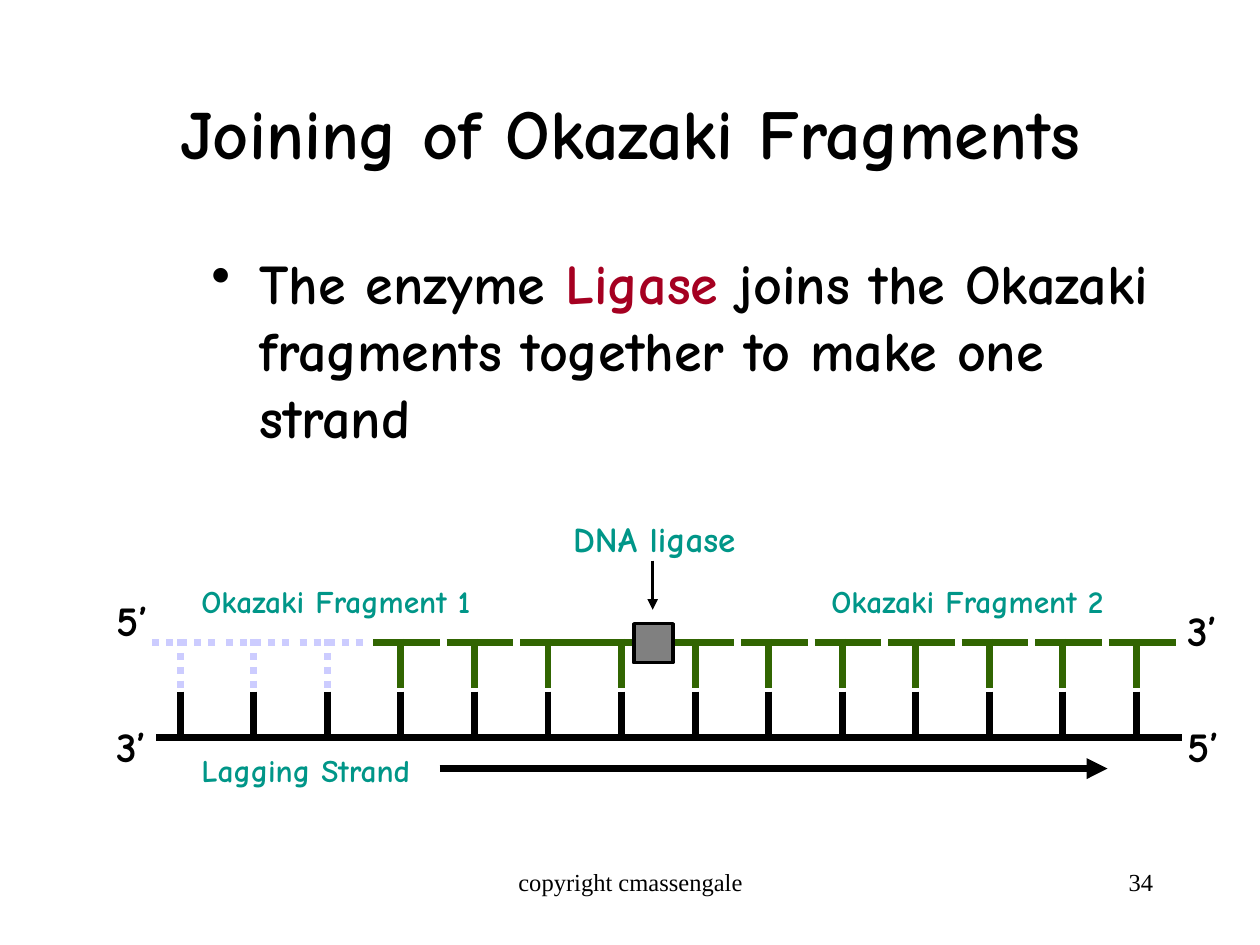
"""Build the slide on joining Okazaki fragments with DNA ligase."""
import pptx
import pptx.dml.color
import pptx.enum.dml
import pptx.enum.shapes
import pptx.enum.text
import pptx.oxml
import pptx.oxml.ns
import pptx.util

Inches = pptx.util.Inches
Pt = pptx.util.Pt
Align = pptx.enum.text.PP_ALIGN
Anchor = pptx.enum.text.MSO_ANCHOR
Dash = pptx.enum.dml.MSO_LINE

THEME = {
    "black": "000000", "red": "A50021", "teal": "009688",
    "green": "316501", "lilac": "CCCCFF", "gray": "808080",
    "font": "Comic Neue", "plain": "Times New Roman",
    "title": 40, "body": 32, "end": 24, "enzyme": 20, "label": 18, "foot": 14,
    "thick": 4, "thin": 2,
}

TITLE = "Joining of Okazaki Fragments"
BODY = [
    ("The enzyme ", "black"),
    ("Ligase", "red"),
    (" joins the Okazaki fragments together to make one strand", "black"),
]
FOOT = [
    ("copyright cmassengale", (3.42, 6.83, 3.17, 0.5), Align.CENTER),
    ("34", (7.17, 6.83, 2.08, 0.5), Align.RIGHT),
]
LABELS = [
    ("Lagging Strand", (1.5, 5.91, 2.01, 0.4), "label", "teal"),
    ("Okazaki Fragment 1", (1.5, 4.57, 2.64, 0.4), "label", "teal"),
    ("Okazaki Fragment 2", (6.5, 4.57, 2.64, 0.4), "label", "teal"),
    ("DNA ligase", (4.45, 4.06, 1.72, 0.44), "enzyme", "teal"),
    ("5’", (0.83, 4.67, 0.48, 0.5), "end", "black"),
    ("3’", (0.83, 5.67, 0.48, 0.5), "end", "black"),
    ("3’", (9.33, 4.75, 0.48, 0.5), "end", "black"),
    ("5’", (9.33, 5.67, 0.48, 0.5), "end", "black"),
]

RUNGS, FADED, JOINED = 14, 3, 6
FIRST, LAST = 1.43, 9.02
STEP = (LAST - FIRST) / (RUNGS - 1)
BAR, LEAD, SHIFT = 0.53, 0.22, 0.39
TOP = {"bar": 5.1, "from": 5.07, "to": 5.46}
BASE = {"bar": 5.85, "from": 5.49, "to": 5.88}


def color(name):
    """Return a theme colour."""
    return pptx.dml.color.RGBColor.from_string(THEME[name])


def apply(item, style):
    """Set each value of a style on an item."""
    for key, value in style.items():
        setattr(item, key, value)


def write(slide, runs, at, size, wrap=True, face="font", bold=True,
          align=Align.LEFT, anchor=Anchor.TOP):
    """Add a text box of coloured runs and return its paragraph."""
    frame = slide.shapes.add_textbox(*map(Inches, at)).text_frame
    apply(frame, {"word_wrap": wrap, "vertical_anchor": anchor})
    para = frame.paragraphs[0]
    para.alignment = align
    for text, tint in runs:
        run = para.add_run()
        run.text = text
        apply(run.font, {"name": THEME[face], "size": Pt(THEME[size]), "bold": bold})
        run.font.color.rgb = color(tint)
    return para


def bullet(para):
    """Give a paragraph a hanging round bullet."""
    props = para._p.get_or_add_pPr()
    for key, value in {"marL": 0.38, "indent": -0.38}.items():
        props.set(key, str(Inches(value)))
    mark = pptx.oxml.ns.qn("a:buChar")
    props.append(props.makeelement(mark, {"char": "•"}))


def stroke(slide, start, end, tint="black", width="thick", dash=None, arrow=False):
    """Draw a straight line, dashed or with an arrowhead if asked."""
    kind = pptx.enum.shapes.MSO_CONNECTOR.STRAIGHT
    link = slide.shapes.add_connector(kind, *map(Inches, start + end))
    link.line.color.rgb = color(tint)
    apply(link.line, {"width": Pt(THEME[width]), "dash_style": dash})
    if arrow:
        line = link.line._ln
        tip = pptx.oxml.ns.qn("a:tailEnd")
        line.append(line.makeelement(tip, {"type": "triangle"}))
    props = link._element.spPr
    props.append(props.makeelement(pptx.oxml.ns.qn("a:effectLst"), {}))


def ladder(slide):
    """Draw the base strand and the fragments paired with it."""
    for i in range(RUNGS):
        x = FIRST + i * STEP
        left = x - (SHIFT if i == JOINED else LEAD)
        faded = i < FADED
        style = {"tint": "lilac" if faded else "green",
                 "dash": Dash.ROUND_DOT if faded else None}
        stroke(slide, (x, BASE["from"]), (x, BASE["to"]))
        stroke(slide, (x, TOP["from"]), (x, TOP["to"]), **style)
        stroke(slide, (left, TOP["bar"]), (left + BAR, TOP["bar"]), **style)
    stroke(slide, (1.24, BASE["bar"]), (9.38, BASE["bar"]))


def ligase(slide):
    """Draw the enzyme as a square on the joint."""
    kind = pptx.enum.shapes.MSO_SHAPE.RECTANGLE
    box = slide.shapes.add_shape(kind, *map(Inches, (5.03, 4.95, 0.31, 0.31)))
    box.shadow.inherit = False
    box.fill.solid()
    box.fill.fore_color.rgb = color("gray")
    box.line.color.rgb = color("black")
    box.line.width = Pt(THEME["thin"])


def main():
    """Build and save the slide."""
    deck = pptx.Presentation()
    apply(deck, {"slide_width": Inches(10), "slide_height": Inches(7.5)})
    slide = deck.slides.add_slide(deck.slide_layouts[6])
    write(slide, [(TITLE, "black")], (0.75, 0.42, 8.5, 1.25), "title",
          align=Align.CENTER, anchor=Anchor.MIDDLE)
    bullet(write(slide, BODY, (1.58, 1.92, 7.83, 2.42), "body"))
    ladder(slide)
    ligase(slide)
    stroke(slide, (3.49, 6.1), (8.79, 6.1), arrow=True)
    stroke(slide, (5.18, 4.45), (5.18, 4.84), width="thin", arrow=True)
    for text, at, size, tint in LABELS:
        write(slide, [(text, tint)], at, size, wrap=False)
    for text, at, align in FOOT:
        write(slide, [(text, "black")], at, "foot", face="plain", bold=False, align=align)
    deck.save("out.pptx")


if __name__ == "__main__":
    main()
